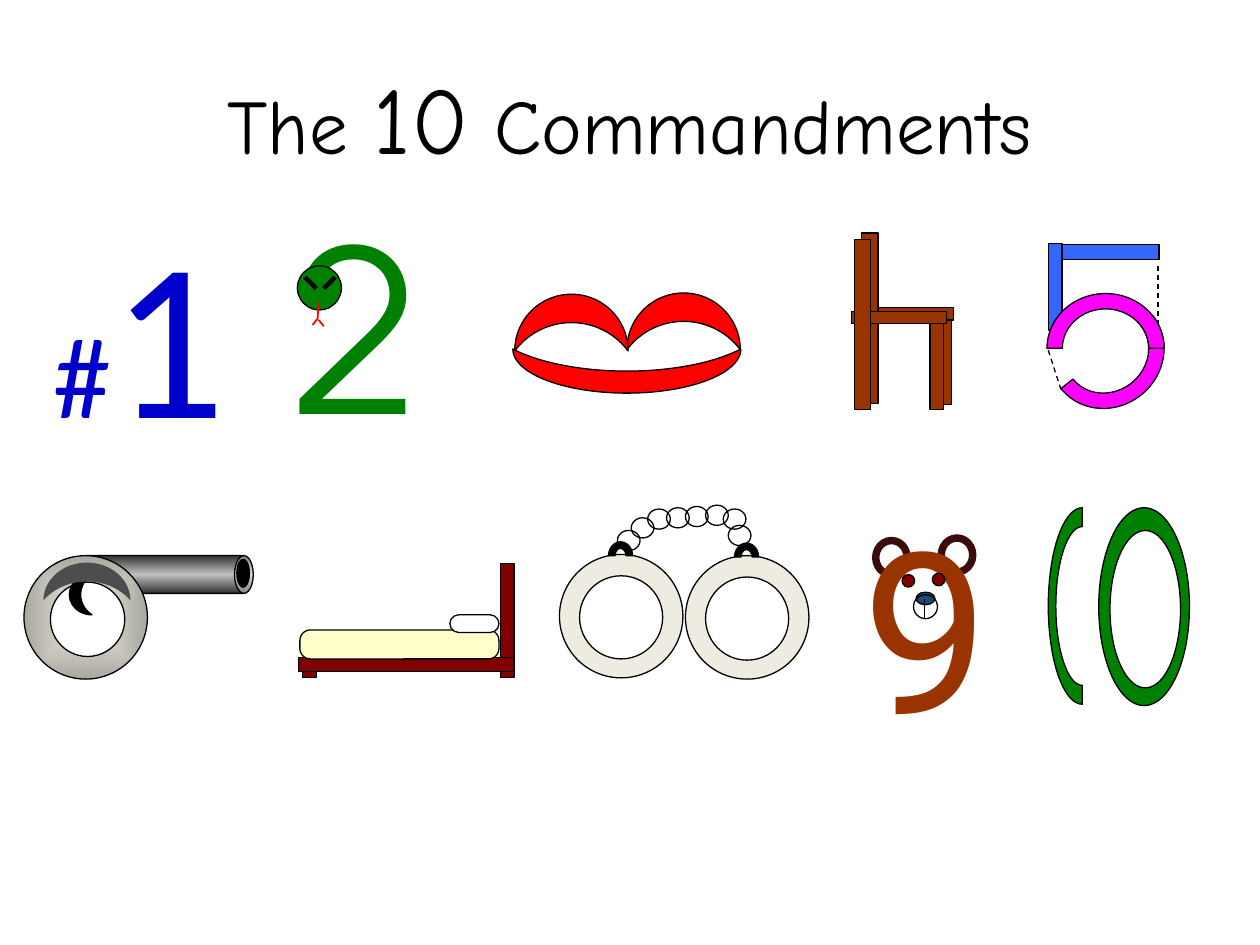
"""Build the slide that pictures each of the ten commandments as its number."""
from math import cos, radians, sin

from lxml.etree import SubElement
from pptx import Presentation
from pptx.dml.color import RGBColor
from pptx.enum.dml import MSO_LINE
from pptx.enum.shapes import MSO_CONNECTOR, MSO_SHAPE as Preset
from pptx.enum.text import MSO_ANCHOR, MSO_AUTO_SIZE, PP_ALIGN
from pptx.oxml.ns import qn
from pptx.util import Inches, Pt

THEME = {
    "black": "000000", "white": "FFFFFF", "blue": "0000CC", "green": "008000",
    "red": "FF0000", "wood": "993300", "sky": "3366FF", "magenta": "FF00FF",
    "maroon": "800000", "cream": "FFFFCC", "ivory": "EEECE1", "smoke": "4D4D4D",
    "navy": "1F497D", "ear": "3A0C0C",
    "steel": ((0, "333333"), (50, "C0C0C0"), (100, "333333")),
    "pearl": ((0, "EEECE1"), (100, "AAA9A1")),
    "title": 44, "ten": 54, "hash": 66, "digit": 129,
    "hairline": 0.75, "tongue": 1, "brow": 2.5, "ear_line": 4.25,
}
OVAL, RECT, ROUND, MOON, ARC = (
    Preset.OVAL, Preset.RECTANGLE, Preset.ROUNDED_RECTANGLE, Preset.MOON, Preset.BLOCK_ARC)
ANGLE = 0.6
TOP_HALF, BOTTOM_HALF = (180 * ANGLE, 0), (0, 180 * ANGLE)
LETTERING, GROW = "Comic Neue", {"auto_size": MSO_AUTO_SIZE.SHAPE_TO_FIT_TEXT}
CUFF_LEFTS = (4.44, 5.44)
CHAIN = [(4.9, 4.21), (5.01, 4.11), (5.14, 4.04), (5.29, 4.03),
         (5.44, 4.02), (5.6, 4.01), (5.74, 4.04), (5.78, 4.17)]

TITLE = [("text", (0.5, 0.3, 9, 1.25),
          [("The ", "title", LETTERING, "black"), ("10", "ten", LETTERING, "black"),
           (" Commandments", "title", LETTERING, "black")],
          {"frame": {"vertical_anchor": MSO_ANCHOR.MIDDLE}, "align": PP_ALIGN.CENTER})]
ONE = [("text", (0.33, 1.48, 2.17, 2.25),
        [("#", "hash", "Calibri", "blue"), ("1", "digit", "Calibri", "blue")],
        {"frame": GROW, "hang": 0.38})]
SNAKE = [
    ("text", (2.22, 1.45, 1.66, 2.25), [("2", "digit", "TeX Gyre Adventor", "green")],
     {"frame": GROW, "hang": 0.38}),
    (OVAL, (2.36, 2.11, 0.35, 0.35), "green", {}),
    ("line", (2.42, 2.2, 2.51, 2.29), "black", {"weight": "brow"}),
    ("line", (2.66, 2.2, 2.57, 2.29), "black", {"weight": "brow"}),
    ("line", (2.53, 2.4, 2.52, 2.54), "red", {"weight": "tongue"}),
    ("line", (2.48, 2.58, 2.52, 2.53), "red", {"weight": "tongue"}),
    ("line", (2.57, 2.59, 2.53, 2.54), "red", {"weight": "tongue"}),
]
LIPS = [
    (MOON, (5.2, 2.1, 0.45, 0.9), "red", {"turn": 90}),
    (MOON, (4.31, 2.11, 0.45, 0.9), "red", {"turn": 90}),
    (MOON, (4.8, 2.04, 0.35, 1.81), "red", {"turn": 270}),
]
CHAIR = [(RECT, at, "wood", {}) for at in (
    (7.44, 2.46, 0.11, 0.75), (6.82, 2.44, 0.75, 0.1), (7.38, 2.5, 0.11, 0.75),
    (6.84, 1.85, 0.13, 1.35), (6.76, 2.47, 0.75, 0.1), (6.78, 1.9, 0.13, 1.35))]
FIVE = [
    (RECT, (8.34, 1.94, 0.86, 0.12), "sky", {}),
    (RECT, (8.32, 1.93, 0.11, 0.69), "sky", {}),
    (ARC, (8.32, 2.36, 0.93, 0.87), "magenta", {"adjust": (*BOTTOM_HALF, 0.14), "turn": 321.6}),
    (ARC, (8.31, 2.33, 0.93, 0.87), "magenta", {"adjust": (*TOP_HALF, 0.14)}),
    ("line", (9.19, 2.11, 9.19, 2.57), "black", {"dash": MSO_LINE.DASH}),
    ("line", (8.32, 2.78, 8.42, 3.09), "black", {"dash": MSO_LINE.DASH}),
]
CANNON = [
    (Preset.CAN, (1.16, 3.86, 0.3, 1.4), "steel", {"adjust": (0.495,), "turn": 90}),
    (OVAL, (0.19, 4.41, 0.98, 0.98), "pearl", {}),
    (OVAL, (0.4, 4.62, 0.59, 0.59), "white", {}),
    (MOON, (0.55, 4.56, 0.18, 0.32), "black", {}),
    (MOON, (0.54, 4.27, 0.3, 0.69), "smoke", {"turn": 90, "line": None}),
    (OVAL, (1.88, 4.44, 0.1, 0.22), "black", {}),
]
BED = [
    (RECT, (2.4, 5.27, 0.11, 0.11), "maroon", {}),
    (RECT, (3.97, 4.47, 0.11, 0.91), "maroon", {}),
    (RECT, (2.37, 5.22, 1.71, 0.11), "maroon", {}),
    (ROUND, (2.38, 5, 1.58, 0.23), "cream", {"adjust": (0.36,)}),
    (ROUND, (3.57, 4.88, 0.39, 0.14), "white", {"adjust": (0.5,)}),
]
HANDCUFFS = [part for index, left in enumerate(CUFF_LEFTS) for part in (
    (OVAL, (left, 4.4 + index / 100, 0.98, 0.98), "ivory", {}),
    (OVAL, (left + 0.16, 4.57 + index / 100, 0.66, 0.66), "white", {}))]
HANDCUFFS += [(OVAL, (*spot, 0.18, 0.16), None, {}) for spot in CHAIN]
HANDCUFFS += [(ARC, (left + 0.39, 4.3 + index / 100, 0.19, 0.22), "black",
               {"adjust": (*TOP_HALF, 0.27)}) for index, left in enumerate(CUFF_LEFTS)]
TEN = [
    ("half ring", (8.59, 4.81, 0.27, 0.78, 0.21, 0.63), "green", {}),
    (OVAL, (8.72, 4.03, 0.72, 1.57), "green", {}),
    (OVAL, (8.81, 4.21, 0.56, 1.25), "white", {}),
]
BEAR = [
    (OVAL, (7.47, 4.27, 0.25, 0.27), None, {"line": "ear", "weight": "ear_line"}),
    (OVAL, (6.95, 4.29, 0.25, 0.27), None, {"line": "ear", "weight": "ear_line"}),
    ("text", (6.75, 3.83, 1.91, 2.25), [("9", "digit", "Roboto", "wood")], {"frame": GROW}),
    (OVAL, (7.16, 4.56, 0.1, 0.1), "maroon", {}),
    (OVAL, (7.4, 4.55, 0.1, 0.1), "maroon", {}),
    (OVAL, (7.27, 4.7, 0.15, 0.1), "navy", {}),
    (OVAL, (7.25, 4.72, 0.19, 0.19), None, {}),
    ("line", (7.34, 4.75, 7.34, 4.91), "black", {}),
]
GROUPS = [SNAKE, LIPS, CHAIR, FIVE, CANNON, BED, HANDCUFFS, TEN, BEAR]


def set_all(target, values):
    for name, value in values.items():
        setattr(target, name, value)


def color(name):
    return RGBColor.from_string(THEME[name])


def paint_gradient(shape, name):
    shape.fill.gradient()
    gradient = shape._element.spPr.find(qn("a:gradFill"))
    for child in list(gradient):
        gradient.remove(child)
    stops = SubElement(gradient, qn("a:gsLst"))
    for place, value in THEME[name]:
        stop = SubElement(stops, qn("a:gs"), pos=str(place * 1000))
        SubElement(stop, qn("a:srgbClr"), val=value)
    if name == "steel":
        SubElement(gradient, qn("a:lin"), ang="0", scaled="0")
    else:
        center = SubElement(gradient, qn("a:path"), path="shape")
        SubElement(center, qn("a:fillToRect"), dict.fromkeys("ltrb", "50000"))


def paint_line(line, name, style):
    if name is None:
        line.fill.background()
        return
    line.color.rgb = color(name)
    set_all(line, {"width": Pt(THEME[style.get("weight", "hairline")]),
                   "dash_style": style.get("dash")})


def paint(shape, fill, style):
    shape.shadow.inherit = False
    if fill is None:
        shape.fill.background()
    elif isinstance(THEME[fill], tuple):
        paint_gradient(shape, fill)
    else:
        shape.fill.solid()
        shape.fill.fore_color.rgb = color(fill)
    paint_line(shape.line, style.get("line", "black"), style)


def add_text(shapes, at, spans, style):
    box = shapes.add_textbox(*map(Inches, at))
    set_all(box.text_frame, {"word_wrap": True, **style["frame"]})
    para = box.text_frame.paragraphs[0]
    para.alignment = style.get("align")
    if "hang" in style:
        hang = Inches(style["hang"])
        para._p.get_or_add_pPr().attrib.update({"marL": str(hang), "indent": str(-hang)})
    for text, size, font, tint in spans:
        span = para.add_run()
        span.text = text
        set_all(span.font, {"name": font, "size": Pt(THEME[size])})
        span.font.color.rgb = color(tint)


def add_line(shapes, ends, tint, style):
    line = shapes.add_connector(MSO_CONNECTOR.STRAIGHT, *map(Inches, ends))
    paint_line(line.line, tint, style)
    SubElement(line._element.spPr, qn("a:effectLst"))


def add_half_ring(shapes, ring, fill, style):
    x, y, *radii = ring
    outer, inner = [
        [(Inches(x + wide * cos(radians(turn))), Inches(y + tall * sin(radians(turn))))
         for turn in range(90, 271, 5)] for wide, tall in (radii[:2], radii[2:])]
    builder = shapes.build_freeform(*outer[0])
    builder.add_line_segments(outer[1:] + inner[::-1], close=True)
    paint(builder.convert_to_shape(), fill, style)


def add_part(shapes, kind, at, content, style):
    special = {"text": add_text, "line": add_line, "half ring": add_half_ring}
    if kind in special:
        special[kind](shapes, at, content, style)
        return
    shape = shapes.add_shape(kind, *map(Inches, at))
    for index, value in enumerate(style.get("adjust", ())):
        shape.adjustments[index] = value
    shape.rotation = style.get("turn", 0)
    paint(shape, content, style)


def main():
    deck = Presentation()
    set_all(deck, {"slide_width": Inches(10), "slide_height": Inches(7.5)})
    page = deck.slides.add_slide(deck.slide_layouts[6])
    for part in TITLE + ONE:
        add_part(page.shapes, *part)
    for parts in GROUPS:
        group = page.shapes.add_group_shape()
        for part in parts:
            add_part(group.shapes, *part)
    deck.save("out.pptx")


if __name__ == "__main__":
    main()
